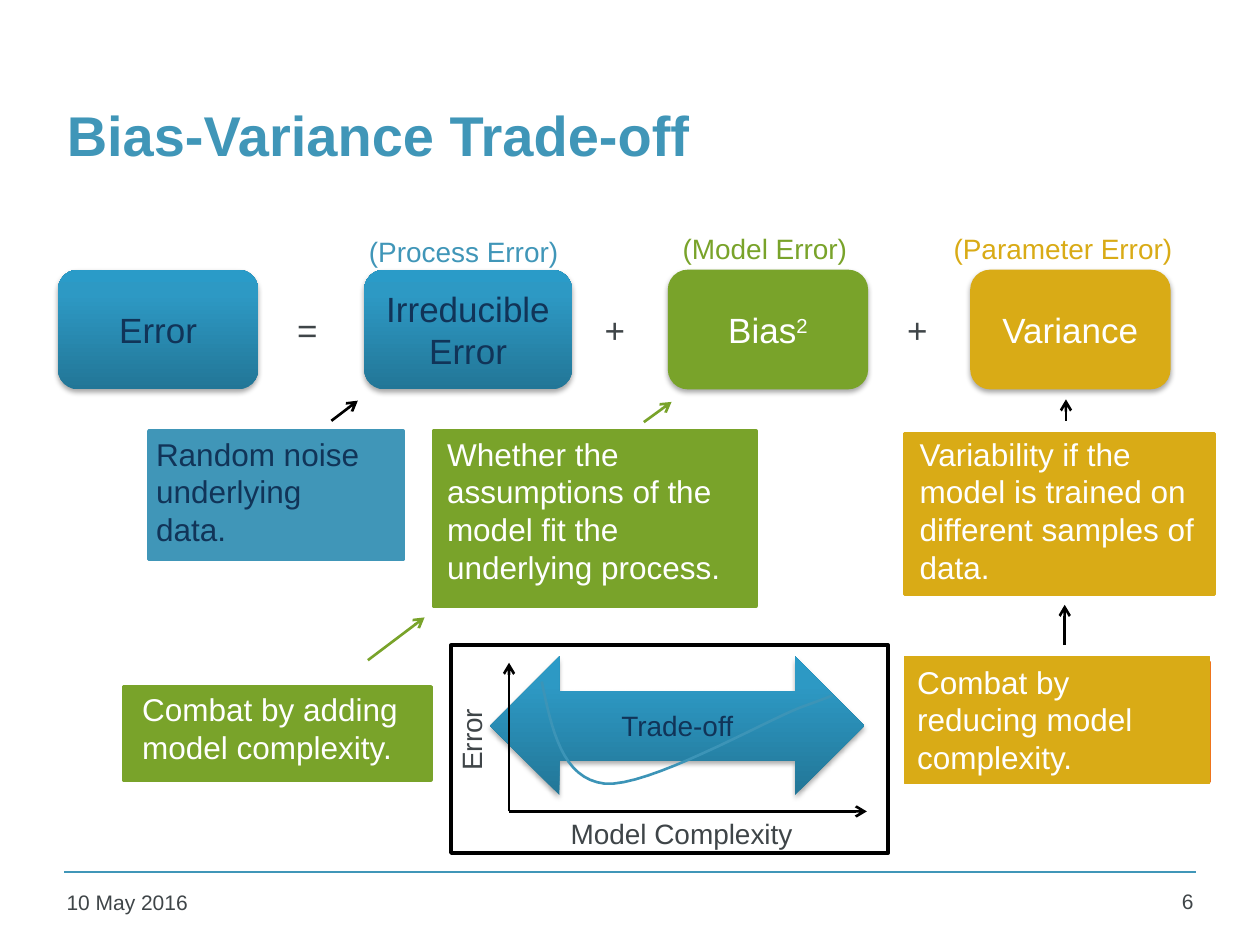
"""Build the bias-variance trade-off slide."""
import pptx
import pptx.dml.color
import pptx.enum.shapes
import pptx.enum.text
import pptx.oxml
import pptx.oxml.ns
import pptx.util

RGB = pptx.dml.color.RGBColor
KIND = pptx.enum.shapes.MSO_SHAPE
ALIGN = pptx.enum.text.PP_ALIGN
ANCHOR = pptx.enum.text.MSO_ANCHOR
BLACK, WHITE = RGB(0, 0, 0), RGB(255, 255, 255)
BLUE, GREEN, GOLD = RGB(0x40, 0x96, 0xB8), RGB(0x79, 0xA3, 0x2A), RGB(0xD9, 0xAB, 0x16)
NAVY, GRAY, ORANGE = RGB(0x11, 0x34, 0x58), RGB(0x3F, 0x45, 0x48), RGB(0xEE, 0x74, 0x1D)
CURVE = RGB(0x3C, 0x94, 0xB7)
SHADE = [(0, RGB(0x22, 0x76, 0x97)), (80, RGB(0x2D, 0x99, 0xC4)), (100, RGB(0x2A, 0x9B, 0xC8))]
PX = 9144
FONT = "Arial"

TITLE = "Bias-Variance Trade-off"
LABELS = [
    ((43, 701, 220, 36), "10 May 2016", 12, GRAY),
    ((443, 643, 228, 37), "Model Complexity", 16, GRAY),
    ((283, 181, 191, 37), "(Process Error)", 16, BLUE),
    ((532, 179, 206, 37), "(Model Error)", 16, GREEN),
    ((747, 179, 206, 37), "(Parameter Error)", 16, GOLD),
    ((226, 240, 51, 44), "=", 20, GRAY),
    ((470, 240, 48, 44), "+", 20, GRAY),
    ((710, 240, 48, 44), "+", 20, GRAY),
]
NOTES = [
    ((118, 342, 202, 102), BLUE, (114, 340, 197, 101), "Random noise underlying data.", NAVY),
    ((344, 342, 256, 139), GREEN, (345, 340, 247, 131),
     "Whether the assumptions of the model fit the underlying process.", WHITE),
    ((718, 344, 246, 128), GOLD, (720, 340, 252, 131),
     "Variability if the model is trained on different samples of data.", WHITE),
    ((98, 545, 244, 74), GREEN, (103, 543, 239, 53),
     "Combat by adding\nmodel complexity.", WHITE),
]
TERMS = [
    ((46, 159), "Error", "", None, NAVY),
    ((289, 165), "Irreducible Error", "", None, NAVY),
    ((530, 159), "Bias", "2", GREEN, WHITE),
    ((770, 159), "Variance", "", GOLD, WHITE),
]
ARROWS = [
    ((404, 644, 404, 526), BLACK),
    ((404, 644, 688, 644), BLACK),
    ((511, 335, 533, 319), GREEN),
    ((263, 334, 284, 318), BLACK),
    ((846, 334, 846, 317), BLACK),
    ((845, 512, 845, 480), BLACK),
    ((292, 524, 337, 490), GREEN),
]
BENDS = [
    ((430, 541), (438, 579), (446, 618), (480, 622)),
    ((480, 622), (514, 625), (604, 574), (634, 562)),
    ((634, 562), (664, 551), (661, 552), (659, 552)),
]


def emu(box):
    return [n * PX for n in box]


def node(tag, body="", **keys):
    attrs = "".join(f' {k}="{v}"' for k, v in keys.items())
    space = pptx.oxml.ns.nsdecls("a")
    return pptx.oxml.parse_xml(f"<a:{tag} {space}{attrs}>{body}</a:{tag}>")


def write(shape, text, size, color, align=ALIGN.LEFT, anchor=ANCHOR.TOP, power="", bold=False):
    frame = shape.text_frame
    frame.word_wrap = True
    frame.vertical_anchor = anchor
    for i, words in enumerate(text.split("\n")):
        para = frame.add_paragraph() if i else frame.paragraphs[0]
        para.alignment = align
        for part in filter(None, (words, power)):
            run = para.add_run()
            run.text = part
            font = run.font
            font.name, font.size, font.bold = FONT, pptx.util.Pt(size), bold
            font.color.rgb = color
            if part == power:
                font._element.set("baseline", "30000")


def label(slide, box, text, size, color, align=ALIGN.LEFT):
    shape = slide.shapes.add_textbox(*emu(box))
    write(shape, text, size, color, align)
    return shape


def block(slide, kind, box, fill=None, line=None, width=2):
    shape = slide.shapes.add_shape(kind, *emu(box))
    shape.shadow.inherit = False
    if fill is None:
        shape.fill.background()
    else:
        shape.fill.solid()
        shape.fill.fore_color.rgb = fill
    if line is None:
        shape.line.fill.background()
    else:
        shape.line.color.rgb = line
        shape.line.width = pptx.util.Pt(width)
    return shape


def raised(slide, kind, box, fill=None):
    shape = block(slide, kind, box, fill or BLUE)
    props = shape._element.spPr
    if fill is None:
        stops = "".join(f'<a:gs pos="{at * 1000}"><a:srgbClr val="{c}"/></a:gs>' for at, c in SHADE)
        grad = node("gradFill", f'<a:gsLst>{stops}</a:gsLst><a:lin ang="16200000" scaled="0"/>',
                    rotWithShape=1)
        props.replace(props.find(pptx.oxml.ns.qn("a:solidFill")), grad)
    tint = '<a:srgbClr val="000000"><a:alpha val="35000"/></a:srgbClr>'
    props.find(pptx.oxml.ns.qn("a:effectLst")).append(
        node("outerShdw", tint, blurRad=40000, dist=23000, dir=5400000, rotWithShape=0))
    return shape


def rule(slide, ends, color, width=1.5, head=True):
    line = slide.shapes.add_connector(pptx.enum.shapes.MSO_CONNECTOR.STRAIGHT, *emu(ends))
    line.line.color.rgb = color
    line.line.width = pptx.util.Pt(width)
    if head:
        line.line._get_or_add_ln().append(node("tailEnd", type="arrow"))
    line._element.spPr.append(node("effectLst"))


def curve(slide, steps=16):
    dots = []
    for a, b, c, d in BENDS:
        for i in range(1, steps + 1):
            t = i / steps
            u = 1 - t
            dots.append([(u**3 * p + 3 * u * u * t * q + 3 * u * t * t * r + t**3 * s) * PX
                         for p, q, r, s in zip(a, b, c, d)])
    pen = slide.shapes.build_freeform(*emu(BENDS[0][0]))
    pen.add_line_segments(dots, close=False)
    shape = pen.convert_to_shape()
    shape.shadow.inherit = False
    shape.fill.background()
    shape.line.color.rgb = CURVE
    shape.line.width = pptx.util.Pt(1.5)


def main():
    deck = pptx.Presentation()
    deck.slide_width, deck.slide_height = emu((1000, 750))
    slide = deck.slides.add_slide(deck.slide_layouts[5])
    rule(slide, (51, 692, 949, 692), BLUE, 1, False)
    title = slide.shapes.title
    title.left, title.top, title.width, title.height = emu((43, 44, 907, 125))
    write(title, TITLE, 32, BLUE, anchor=ANCHOR.MIDDLE, bold=True)
    label(slide, (886, 700, 71, 37), "6", 12, GRAY, ALIGN.RIGHT)

    block(slide, KIND.RECTANGLE, (358, 512, 347, 165), line=BLACK)
    trade = raised(slide, KIND.LEFT_RIGHT_ARROW, (389, 521, 297, 110))
    write(trade, "Trade-off", 16, NAVY, ALIGN.CENTER, ANCHOR.MIDDLE)
    label(slide, (315, 544, 118, 37), "Error", 16, GRAY).rotation = 270
    curve(slide)

    for box, fill, place, text, color in NOTES:
        block(slide, KIND.RECTANGLE, box, fill, fill)
        label(slide, place, text, 18, color)
    block(slide, KIND.RECTANGLE, (719, 525, 242, 96), ORANGE)
    remedy = block(slide, KIND.RECTANGLE, (718, 521, 242, 101), GOLD, GOLD, 0.75)
    write(remedy, "Combat by reducing model complexity.", 18, WHITE)

    for (left, width), text, power, fill, color in TERMS:
        term = raised(slide, KIND.ROUNDED_RECTANGLE, (left, 214, width, 95), fill)
        write(term, text, 20, color, ALIGN.CENTER, ANCHOR.MIDDLE, power)
    for item in LABELS:
        label(slide, *item)
    for ends, color in ARROWS:
        rule(slide, ends, color)
    deck.save("out.pptx")


if __name__ == "__main__":
    main()
